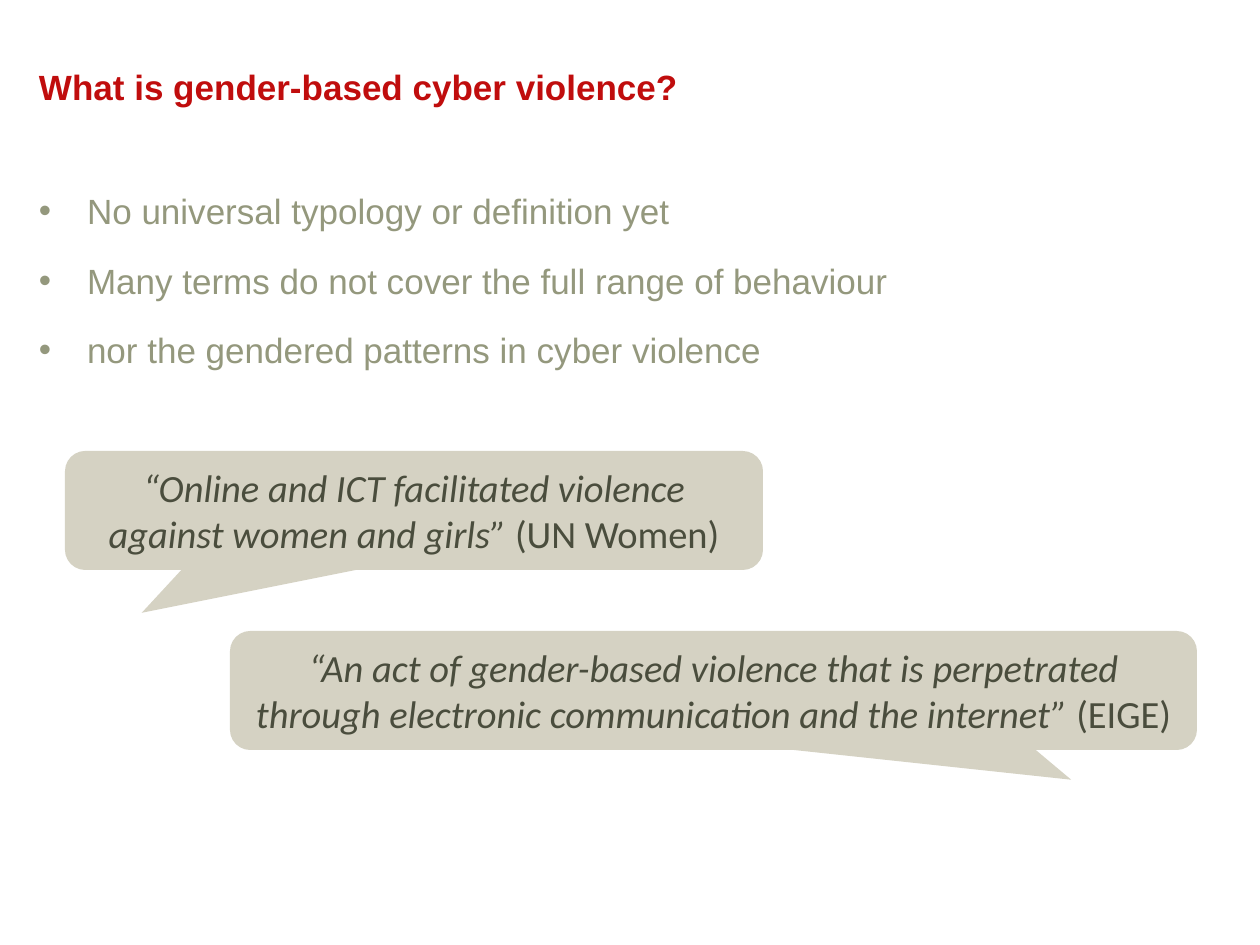
from lxml import etree
from pptx import Presentation
from pptx.dml.color import RGBColor
from pptx.enum.shapes import MSO_SHAPE
from pptx.enum.text import MSO_ANCHOR, PP_ALIGN
from pptx.oxml.ns import qn
from pptx.util import Emu, Pt

PX = 914400 // 126
RED, OLIVE, SAND, DARK = "C00D0D", "94987D", "D5D2C3", "4A4D3D"
INDENT = 48

TITLE = "What is gender-based cyber violence?"
POINTS = [
    "No universal typology or definition yet",
    "Many terms do not cover the full range of behaviour",
    "nor the gendered patterns in cyber violence",
]
# Each callout: place, tail and corner adjustments, quote, source
CALLOUTS = [
    ((65, 451, 698, 119), (-0.39, 0.86, 0.17),
     "“Online and ICT facilitated violence against women and girls” ", "(UN Women)"),
    ((230, 631, 967, 119), (0.37, 0.75, 0.17),
     "“An act of gender-based violence that is perpetrated through "
     "electronic communication and the internet” ", "(EIGE)"),
]


def px(*lengths):
    return [Emu(length * PX) for length in lengths]


def color(value):
    return RGBColor.from_string(value)


def add_span(para, text, size, font, ink, bold=False, italic=False):
    span = para.add_run()
    span.text = text
    span.font.size = Pt(size)
    span.font.name = font
    span.font.color.rgb = color(ink)
    span.font.bold = bold
    span.font.italic = italic


def add_text_frame(page, place):
    """Add a wrapping text box without side margins and return its frame."""
    frame = page.shapes.add_textbox(*px(*place)).text_frame
    frame.word_wrap = True
    frame.margin_left = frame.margin_right = frame.margin_bottom = 0
    frame.margin_top = px(4)[0]
    return frame


def add_bullet(para):
    properties = para._p.get_or_add_pPr()
    indent = INDENT * PX
    properties.set("marL", str(indent))
    properties.set("indent", str(-indent))
    bullet_color = etree.SubElement(properties, qn("a:buClr"))
    etree.SubElement(bullet_color, qn("a:srgbClr"), val=OLIVE)
    etree.SubElement(properties, qn("a:buFont"), typeface="Arial")
    etree.SubElement(properties, qn("a:buChar"), char="•")


def add_callout(page, place, adjustments, quote, source):
    callout = page.shapes.add_shape(MSO_SHAPE.ROUNDED_RECTANGULAR_CALLOUT, *px(*place))
    for index, value in enumerate(adjustments):
        callout.adjustments[index] = value
    callout.shadow.inherit = False
    callout.fill.solid()
    callout.fill.fore_color.rgb = color(SAND)
    callout.line.fill.background()
    frame = callout.text_frame
    frame.word_wrap = True
    frame.vertical_anchor = MSO_ANCHOR.MIDDLE
    para = frame.paragraphs[0]
    para.alignment = PP_ALIGN.CENTER
    add_span(para, quote, 22, "Calibri", DARK, italic=True)
    add_span(para, source, 22, "Calibri", DARK)


def main():
    deck = Presentation()
    deck.slide_width, deck.slide_height = px(1260, 945)
    page = deck.slides.add_slide(deck.slide_layouts[6])

    heading = add_text_frame(page, (39, 49, 1158, 91)).paragraphs[0]
    heading.line_spacing = 1.3
    add_span(heading, TITLE, 20, "Arial", RED, bold=True)

    body = add_text_frame(page, (39, 160, 1158, 651))
    for index, point in enumerate(POINTS):
        para = body.add_paragraph() if index else body.paragraphs[0]
        add_bullet(para)
        para.line_spacing = 1.6
        if index:
            para.space_before = Pt(1.5)
        add_span(para, point, 20, "Arial", OLIVE)

    for callout in CALLOUTS:
        add_callout(page, *callout)

    deck.save("out.pptx")


if __name__ == "__main__":
    main()
